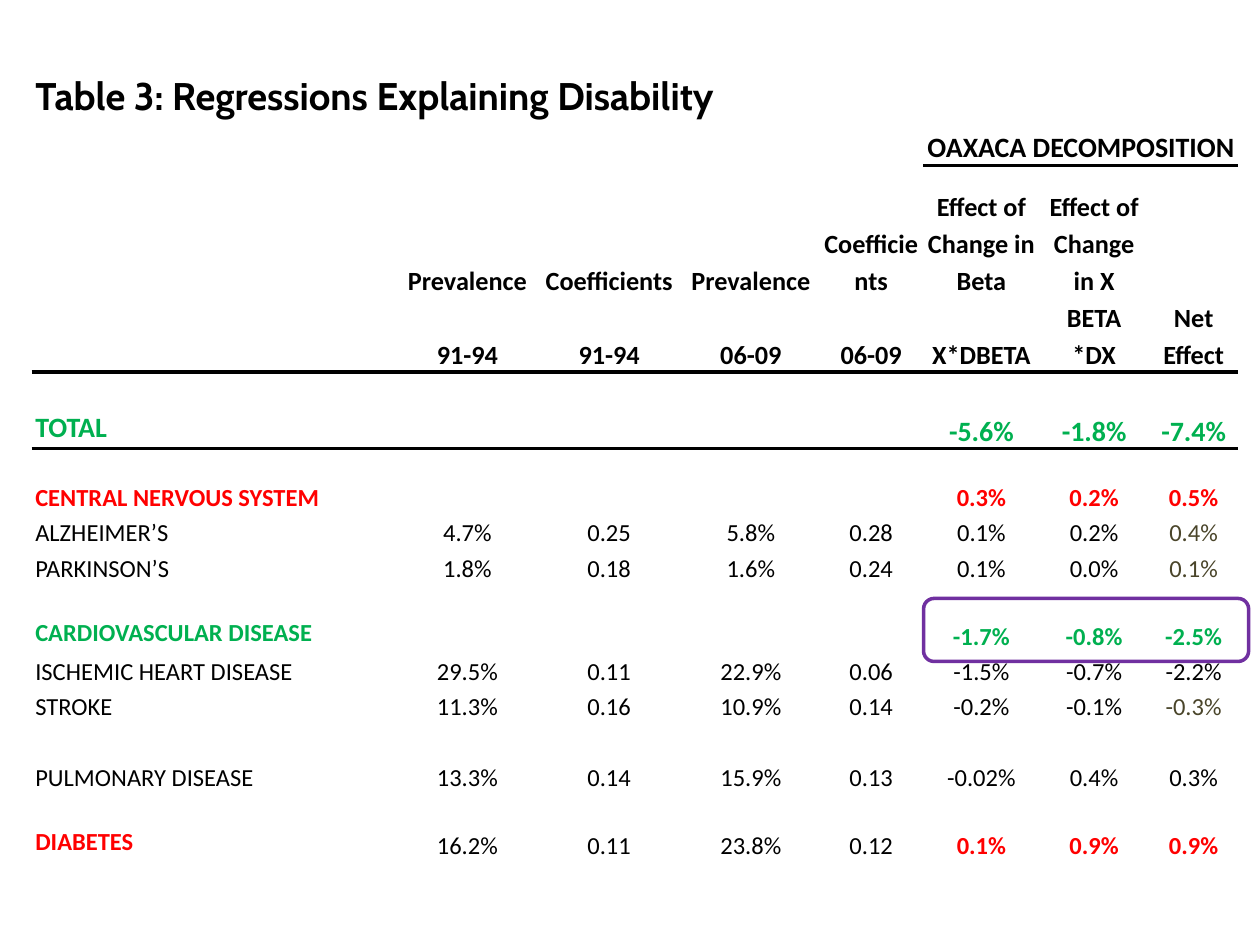
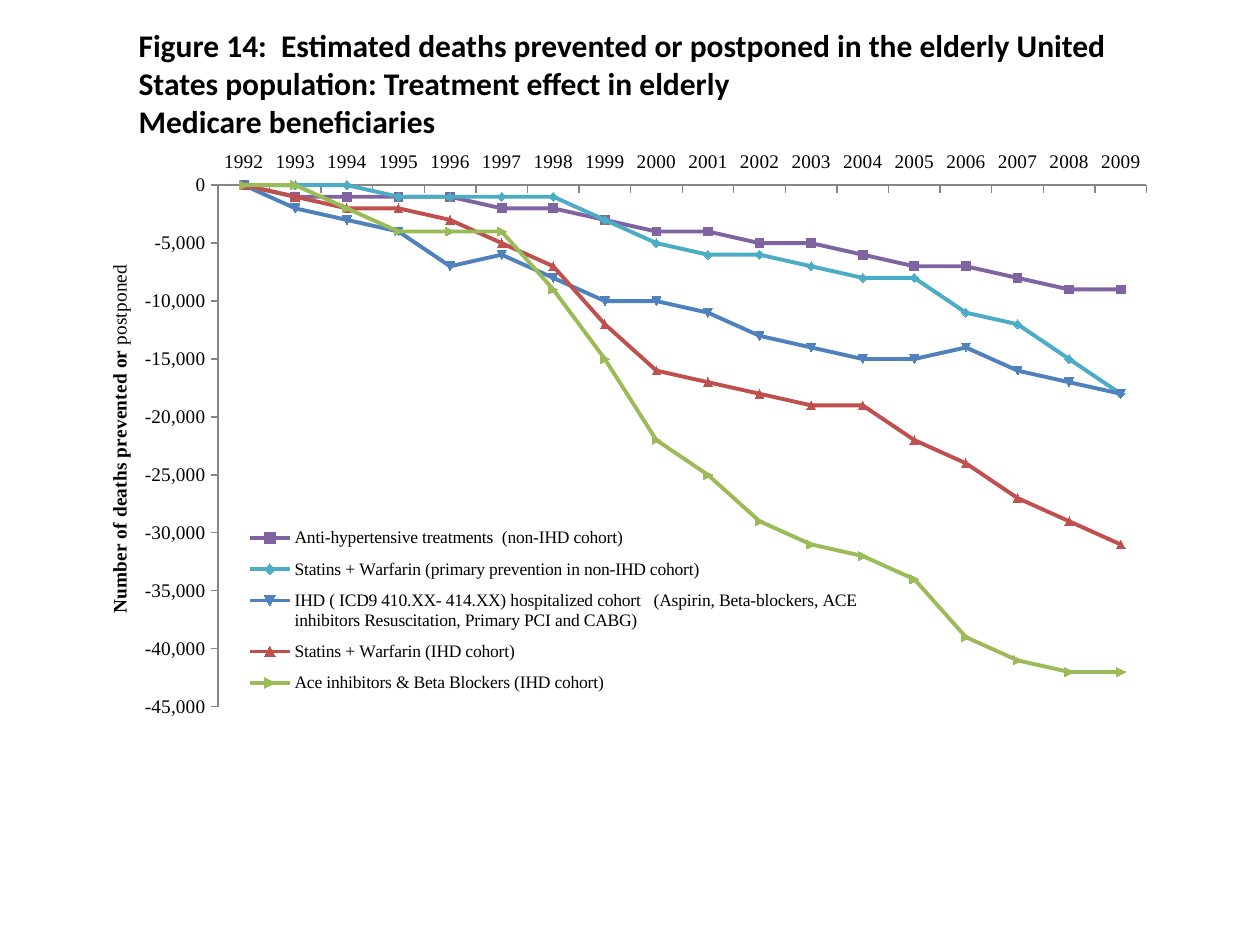
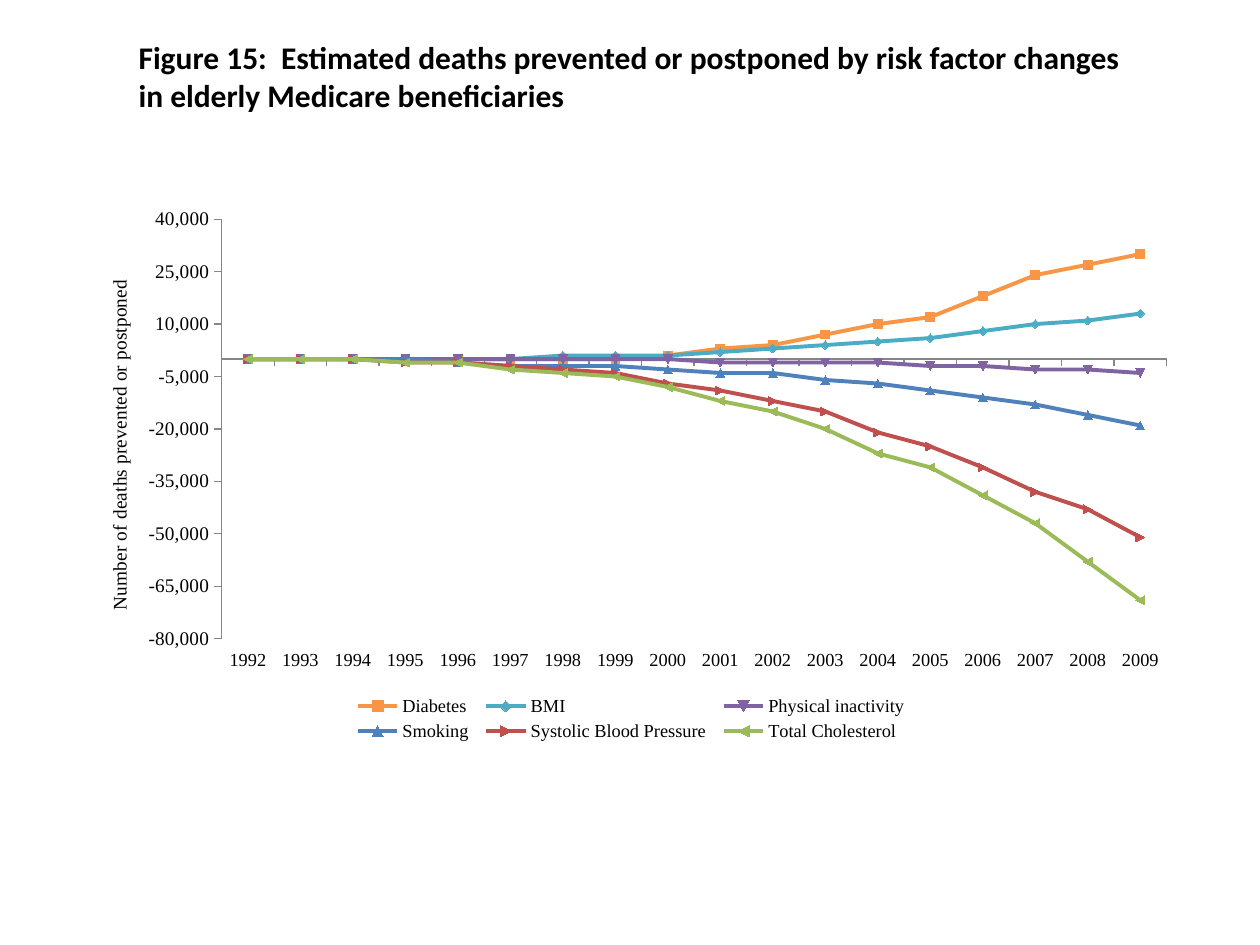
from dataclasses import dataclass

from lxml import etree
from pptx import Presentation
from pptx.chart.data import CategoryChartData
from pptx.dml.color import RGBColor
from pptx.enum.chart import XL_CHART_TYPE, XL_LEGEND_POSITION, XL_TICK_LABEL_POSITION, XL_TICK_MARK
from pptx.enum.shapes import MSO_SHAPE
from pptx.enum.text import MSO_ANCHOR, MSO_AUTO_SIZE, PP_ALIGN
from pptx.oxml.ns import qn
from pptx.util import Inches, Pt

LINE_MARKERS = XL_CHART_TYPE.LINE_MARKERS
LEGEND_BOTTOM = XL_LEGEND_POSITION.BOTTOM
LABELS_LOW, LABELS_HIGH = XL_TICK_LABEL_POSITION.LOW, XL_TICK_LABEL_POSITION.HIGH
TICK_OUT, TICK_NONE = XL_TICK_MARK.OUTSIDE, XL_TICK_MARK.NONE
ROUNDED = MSO_SHAPE.ROUNDED_RECTANGLE
TOP, BOTTOM = MSO_ANCHOR.TOP, MSO_ANCHOR.BOTTOM
LEFT, CENTER = PP_ALIGN.LEFT, PP_ALIGN.CENTER
NO_AUTOFIT = MSO_AUTO_SIZE.NONE
NO_TABLE_STYLE = "{2D5ABB26-0587-4C30-8999-92F81FD0307C}"


@dataclass(frozen=True)
class Theme:
    black: str = "000000"
    white: str = "FFFFFF"
    green: str = "00B050"
    red: str = "FF0000"
    olive: str = "4A452A"
    purple: str = "7030A0"
    axis: str = "868686"
    sans: str = "Calibri"
    serif: str = "Times New Roman"
    table_title_font: str = "Cabin"
    table_title: float = 22
    title: float = 18
    total: float = 16
    header: float = 15
    body: float = 14
    axis_text: float = 11
    small_axis_text: float = 10.5
    legend: float = 10


T = Theme()

# Slide 1
TABLE_TITLE = "Table 3: Regressions Explaining Disability"
DECOMPOSITION = "OAXACA DECOMPOSITION"
MEASURES = ["Prevalence", "Coefficients", "Prevalence", "Coefficients",
            "Effect of Change in Beta", "Effect of Change in X"]
MEASURE_DETAILS = [["91-94"], ["91-94"], ["06-09"], ["06-09"], ["X*DBETA"], ["BETA", "*DX"]]
NET_EFFECT = "Net Effect"
TOTAL, NERVOUS = "TOTAL", "CENTRAL NERVOUS SYSTEM"

# label, values that end in the last column, group colour, olive net effect
CONDITIONS = [
    (TOTAL, "-5.6% -1.8% -7.4%", T.green, False),
    (NERVOUS, "0.3% 0.2% 0.5%", T.red, False),
    ("ALZHEIMER’S", "4.7% 0.25 5.8% 0.28 0.1% 0.2% 0.4%", None, True),
    ("PARKINSON’S", "1.8% 0.18 1.6% 0.24 0.1% 0.0% 0.1%", None, True),
    ("CARDIOVASCULAR DISEASE", "-1.7% -0.8% -2.5%", T.green, False),
    ("ISCHEMIC HEART DISEASE", "29.5% 0.11 22.9% 0.06 -1.5% -0.7% -2.2%", None, False),
    ("STROKE", "11.3% 0.16 10.9% 0.14 -0.2% -0.1% -0.3%", None, True),
    ("", "", None, False),
    ("PULMONARY DISEASE", "13.3% 0.14 15.9% 0.13 -0.02% 0.4% 0.3%", None, False),
    ("DIABETES", "16.2% 0.11 23.8% 0.12 0.1% 0.9% 0.9%", T.red, False),
    ("", "", None, False),
]
COLUMN_WIDTHS = [2.92, 1.08, 1.17, 1.08, 0.83, 0.92, 0.87, 0.71]
HEADER_HEIGHTS = [0.37, 0.36, 0.35, 0.35, 0.35, 0.59]
SPECIAL_HEIGHTS = {TOTAL: 0.61, NERVOUS: 0.51}
GROUP_HEIGHT, CONDITION_HEIGHT = 0.54, 0.28
EFFECTS_COLUMN, NET_COLUMN = 5, 7

# Slides 2 and 3: series values in thousands of deaths, chart parts in inches
YEARS = [str(year) for year in range(1992, 2010)]
AXIS_TITLE = ("Number of deaths prevented or ", "postponed")

FIGURES = [
    dict(
        title=["Figure 14:  Estimated deaths prevented or postponed in the elderly "
               "United States population: Treatment effect in elderly",
               "Medicare beneficiaries"],
        title_box=(1, 0.16, 8.42, 1.01),
        chart_box=(0.74, 1.08, 8.51, 4.82),
        plot=(0.99, 0.39, 7.37, 4.14),
        legend=(1.01, 3.02, 5.28, 1.49),
        axis_title=(0.08, 0.99),
        scale=(-45000, 0, 5000),
        year_size=T.axis_text, legend_size=T.legend,
        year_position=LABELS_HIGH, bold_axis_title=True,
        series=[
            ("Anti-hypertensive treatments  (non-IHD cohort)", "8064A2",
             [0, -1, -1, -1, -1, -2, -2, -3, -4, -4, -5, -5, -6, -7, -7, -8, -9, -9]),
            ("Statins + Warfarin (primary prevention in non-IHD cohort)", "4BACC6",
             [0, 0, 0, -1, -1, -1, -1, -3, -5, -6, -6, -7, -8, -8, -11, -12, -15, -18]),
            ("IHD ( ICD9 410.XX- 414.XX) hospitalized cohort   (Aspirin, Beta-blockers, "
             "ACE inhibitors Resuscitation, Primary PCI and CABG)", "4F81BD",
             [0, -2, -3, -4, -7, -6, -8, -10, -10, -11, -13, -14, -15, -15, -14, -16, -17, -18]),
            ("Statins + Warfarin (IHD cohort)", "C0504D",
             [0, -1, -2, -2, -3, -5, -7, -12, -16, -17, -18, -19, -19, -22, -24, -27, -29, -31]),
            ("Ace inhibitors & Beta Blockers (IHD cohort)", "9BBB59",
             [0, 0, -2, -4, -4, -4, -9, -15, -22, -25, -29, -31, -32, -34, -39, -41, -42, -42]),
        ],
    ),
    dict(
        title=["Figure 15:  Estimated deaths prevented or postponed by risk factor "
               "changes in elderly Medicare beneficiaries"],
        title_box=(1, 0.25, 8, 0.71),
        chart_box=(0.57, 1.57, 8.87, 4.35),
        plot=(1.19, 0.17, 7.5, 3.33),
        legend=(2.18, 3.92, 4.52, 0.44),
        axis_title=(0.25, 0.62),
        scale=(-80000, 40000, 15000),
        year_size=T.small_axis_text, legend_size=T.small_axis_text,
        year_position=LABELS_LOW, bold_axis_title=False,
        series=[
            ("Diabetes", "F79646",
             [0, 0, 0, 0, 0, 0, 0, 0, 1, 3, 4, 7, 10, 12, 18, 24, 27, 30]),
            ("BMI", "4BACC6",
             [0, 0, 0, 0, 0, 0, 1, 1, 1, 2, 3, 4, 5, 6, 8, 10, 11, 13]),
            ("Physical inactivity", "8064A2",
             [0, 0, 0, 0, 0, 0, 0, 0, 0, -1, -1, -1, -1, -2, -2, -3, -3, -4]),
            ("Smoking", "4F81BD",
             [0, 0, 0, 0, -1, -2, -2, -2, -3, -4, -4, -6, -7, -9, -11, -13, -16, -19]),
            ("Systolic Blood Pressure", "C0504D",
             [0, 0, 0, -1, -1, -2, -3, -4, -7, -9, -12, -15, -21, -25, -31, -38, -43, -51]),
            ("Total Cholesterol", "9BBB59",
             [0, 0, 0, -1, -1, -3, -4, -5, -8, -12, -15, -20, -27, -31, -39, -47, -58, -69]),
        ],
    ),
]


def rgb(color):
    return RGBColor.from_string(color)


def inches(box):
    return [Inches(length) for length in box]


def style_font(font, size, name=T.sans, color=T.black, bold=False):
    font.size, font.name, font.bold = Pt(size), name, bold
    font.color.rgb = rgb(color)


def write(frame, lines, align=LEFT, spacing=None, **font_format):
    """Put each line in its own paragraph of the text frame."""
    for i, line in enumerate(lines):
        paragraph = frame.add_paragraph() if i else frame.paragraphs[0]
        paragraph.alignment = align
        paragraph.line_spacing = spacing
        run = paragraph.add_run()
        run.text = line
        style_font(run.font, **font_format)


def fill_cell(cell, lines, **text_format):
    cell.vertical_anchor = BOTTOM
    text_format = {"align": CENTER, "spacing": 1.15, **text_format}
    write(cell.text_frame, lines, **text_format)


def rule_below(cell):
    line = etree.Element(qn("a:lnB"), w=str(Pt(2.25)))
    fill = etree.SubElement(line, qn("a:solidFill"))
    etree.SubElement(fill, qn("a:srgbClr"), val=T.black)
    cell._tc.get_or_add_tcPr().insert(0, line)


def row_height(label, color):
    return SPECIAL_HEIGHTS.get(label, GROUP_HEIGHT if color else CONDITION_HEIGHT)


def add_regression_table(slide):
    heights = HEADER_HEIGHTS + [row_height(label, color) for label, _, color, _ in CONDITIONS]
    box = inches((0.25, 0.58, sum(COLUMN_WIDTHS), sum(heights)))
    table = slide.shapes.add_table(len(heights), len(COLUMN_WIDTHS), *box).table
    table.first_row = table.horz_banding = False
    table._tbl.tblPr.find(qn("a:tableStyleId")).text = NO_TABLE_STYLE
    for column, width in zip(table.columns, COLUMN_WIDTHS):
        column.width = Inches(width)
    for row, height in zip(table.rows, heights):
        row.height = Inches(height)

    total_row = len(HEADER_HEIGHTS)
    detail_row = total_row - 1
    for row, first_column in ((1, EFFECTS_COLUMN), (detail_row, 0), (total_row, 0)):
        for column in range(first_column, len(COLUMN_WIDTHS)):
            rule_below(table.cell(row, column))
    rule_below(table.cell(3, NET_COLUMN))

    table.cell(0, 0).merge(table.cell(0, NET_COLUMN))
    table.cell(1, EFFECTS_COLUMN).merge(table.cell(1, NET_COLUMN))
    table.cell(3, NET_COLUMN).merge(table.cell(detail_row, NET_COLUMN))
    for column in range(1, NET_COLUMN):
        table.cell(2, column).merge(table.cell(4, column))

    for cell in table.iter_cells():
        cell.fill.solid()
        cell.fill.fore_color.rgb = rgb(T.white)
        cell.margin_left = cell.margin_right = Inches(0.03)
        cell.margin_top = cell.margin_bottom = 0
        etree.SubElement(cell.text_frame.paragraphs[0]._p, qn("a:endParaRPr"), sz="1000")

    fill_cell(table.cell(0, 0), [TABLE_TITLE], align=LEFT, spacing=1.0,
              size=T.table_title, name=T.table_title_font, bold=True)
    fill_cell(table.cell(1, EFFECTS_COLUMN), [DECOMPOSITION], size=T.total, bold=True)
    for column, (measure, details) in enumerate(zip(MEASURES, MEASURE_DETAILS), 1):
        fill_cell(table.cell(2, column), [measure], size=T.header, bold=True)
        fill_cell(table.cell(detail_row, column), details, size=T.header, bold=True)
    fill_cell(table.cell(3, NET_COLUMN), [NET_EFFECT], size=T.header, bold=True)

    for row, (label, values, color, olive_net) in enumerate(CONDITIONS, total_row):
        if not label:
            continue
        size = T.total if label == TOTAL else T.body
        highlight = dict(color=color or T.black, bold=bool(color))
        label_cell = table.cell(row, 0)
        fill_cell(label_cell, [label], align=LEFT, size=size, **highlight)
        if color and label != NERVOUS:
            label_cell.margin_bottom = Inches(0.03)
        values = values.split()
        for column, value in enumerate(values, len(COLUMN_WIDTHS) - len(values)):
            look = highlight if column >= EFFECTS_COLUMN else {}
            if olive_net and column == NET_COLUMN:
                look = dict(color=T.olive)
            fill_cell(table.cell(row, column), [value], size=size, **look)


def add_highlight(slide):
    frame = slide.shapes.add_shape(ROUNDED, *inches((7.33, 4.75, 2.58, 0.5)))
    frame.shadow.inherit = False
    frame.fill.background()
    frame.line.color.rgb = rgb(T.purple)
    frame.line.width = Pt(2)


def set_layout(element, index, box, chart_box, inner=False):
    """Place a chart part, given in inches from the chart's corner."""
    for old in element.findall(qn("c:layout")):
        element.remove(old)
    layout = etree.Element(qn("c:layout"))
    manual = etree.SubElement(layout, qn("c:manualLayout"))
    width, height = chart_box[2:]
    fractions = [length / whole for length, whole in zip(box, (width, height) * 2)]
    settings = [("layoutTarget", "inner")] if inner else []
    settings += [("xMode", "edge"), ("yMode", "edge"), *zip("xywh", fractions)]
    for tag, value in settings:
        etree.SubElement(manual, qn(f"c:{tag}"), val=str(value))
    element.insert(index, layout)


def style_axis(axis, size):
    axis.has_major_gridlines = False
    axis.major_tick_mark, axis.minor_tick_mark = TICK_OUT, TICK_NONE
    axis.format.line.color.rgb = rgb(T.axis)
    style_font(axis.tick_labels.font, size, T.serif)


def add_figure_title(slide, lines, box):
    title = slide.shapes.title
    title.left, title.top, title.width, title.height = inches(box)
    frame = title.text_frame
    frame.word_wrap = True
    frame.auto_size = NO_AUTOFIT
    frame.vertical_anchor = TOP
    write(frame, lines, size=T.title, bold=True)


def add_deaths_chart(slide, figure):
    data = CategoryChartData(number_format="#,##0")
    data.categories = YEARS
    for name, _, thousands in figure["series"]:
        data.add_series(name, [value * 1000 for value in thousands])
    chart_box = figure["chart_box"]
    chart = slide.shapes.add_chart(LINE_MARKERS, *inches(chart_box), data).chart
    chart.has_title = False
    style_font(chart.font, T.legend)

    plot = chart.plots[0]
    plot.vary_by_categories = False
    for series, (_, color, _) in zip(plot.series, figure["series"]):
        series.smooth = False
        series.format.line.color.rgb = rgb(color)
        series.format.line.width = Pt(2.25)
        series.marker.size = 5
        series.marker.format.fill.solid()
        series.marker.format.fill.fore_color.rgb = rgb(color)
        series.marker.format.line.color.rgb = rgb(color)

    years, deaths = chart.category_axis, chart.value_axis
    style_axis(years, figure["year_size"])
    style_axis(deaths, T.axis_text)
    years.tick_label_position = figure["year_position"]
    deaths.minimum_scale, deaths.maximum_scale, deaths.major_unit = figure["scale"]
    deaths.tick_labels.number_format = "#,##0"
    deaths.tick_labels.number_format_is_linked = False
    paragraph = deaths.axis_title.text_frame.paragraphs[0]
    for words, bold in zip(AXIS_TITLE, (figure["bold_axis_title"], False)):
        run = paragraph.add_run()
        run.text = words
        style_font(run.font, T.axis_text, T.serif, bold=bold)

    chart.has_legend = True
    legend = chart.legend
    legend.position = LEGEND_BOTTOM
    legend.include_in_layout = False
    style_font(legend.font, figure["legend_size"], T.serif)

    set_layout(legend._element, 1, figure["legend"], chart_box)
    set_layout(deaths.axis_title._element, 1, figure["axis_title"], chart_box)
    set_layout(chart._chartSpace.chart.plotArea, 0, figure["plot"], chart_box, inner=True)


def main():
    deck = Presentation()
    deck.slide_width, deck.slide_height = Inches(10), Inches(7.5)
    title_only, blank = deck.slide_layouts[5], deck.slide_layouts[6]

    regressions = deck.slides.add_slide(blank)
    add_regression_table(regressions)
    add_highlight(regressions)

    for figure in FIGURES:
        slide = deck.slides.add_slide(title_only)
        add_deaths_chart(slide, figure)
        add_figure_title(slide, figure["title"], figure["title_box"])
    deck.save("out.pptx")


if __name__ == "__main__":
    main()
